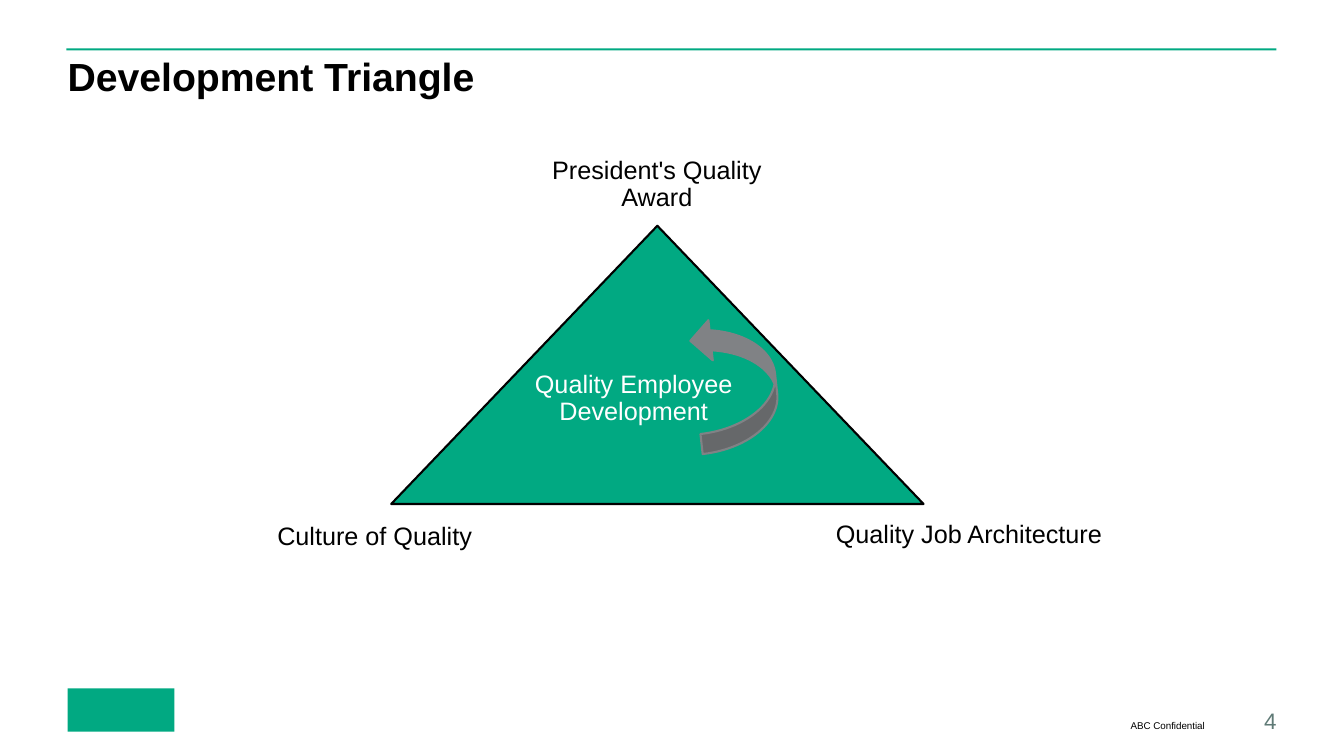
import pptx
import pptx.util
import pptx.dml.color
import pptx.enum.shapes
import pptx.enum.text

Inches = pptx.util.Inches
Pt = pptx.util.Pt
Kind = pptx.enum.shapes.MSO_SHAPE
Align = pptx.enum.text.PP_ALIGN
Anchor = pptx.enum.text.MSO_ANCHOR

hues = {"green": "01A982", "gray": "808285", "black": "000000",
        "white": "FFFFFF", "slate": "5F7A76"}

deck = pptx.Presentation()
deck.slide_width = Inches(13.33)
deck.slide_height = Inches(7.5)
slide = deck.slides.add_slide(deck.slide_layouts[6])


def tint(name):
    return pptx.dml.color.RGBColor.from_string(hues[name])


def draw(kind, box, fill, edge=None):
    shape = slide.shapes.add_shape(kind, *map(Inches, box))
    shape.shadow.inherit = False
    shape.fill.solid()
    shape.fill.fore_color.rgb = tint(fill)
    if edge:
        shape.line.color.rgb = tint(edge)
        shape.line.width = Pt(1.5)
    else:
        shape.line.fill.background()
    return shape


draw(Kind.RECTANGLE, (0.66, 0.48, 12, 0.02), "green")
draw(Kind.RECTANGLE, (0.67, 6.83, 1.06, 0.43), "green")
draw(Kind.ISOSCELES_TRIANGLE, (3.88, 2.24, 5.28, 2.76), "green", "black")
arrow = draw(Kind.CURVED_UP_ARROW, (6.63, 3.4, 1.33, 0.8), "gray", "gray")
arrow.rotation = 263.8

wide, high = 2.91, 0.49
top, low = Anchor.TOP, Anchor.BOTTOM
left, mid, right = Align.LEFT, Align.CENTER, Align.RIGHT
texts = [
    ("Development Triangle", (0.67, 0.57, 12, 0.93), 28, "black", left, top),
    ("Quality Employee Development", (4.83, 3.69, wide, high), 18, "white", mid, top),
    ("Quality Job Architecture", (8.29, 5.18, wide, high), 18, "black", left, top),
    ("Culture of Quality", (2.75, 5.2, wide, high), 18, "black", left, top),
    ("President's Quality\nAward", (5.06, 1.56, wide, high), 18, "black", mid, top),
    ("ABC Confidential", (7.58, 7.03, 4.37, 0.23), 7, "black", right, low),
    ("4", (12.08, 7.03, 0.58, 0.25), 16, "slate", right, low),
]
for words, box, size, hue, align, anchor in texts:
    frame = slide.shapes.add_textbox(*map(Inches, box)).text_frame
    frame.word_wrap = True
    frame.vertical_anchor = anchor
    frame.margin_left = frame.margin_right = 0
    frame.margin_top = frame.margin_bottom = 0
    frame.text = words
    for line in frame.paragraphs:
        line.alignment = align
        line.font.name = "Arial"
        line.font.size = Pt(size)
        line.font.bold = size == 28
        line.font.color.rgb = tint(hue)
        if anchor == top:
            line.line_spacing = 0.9

deck.save("out.pptx")
